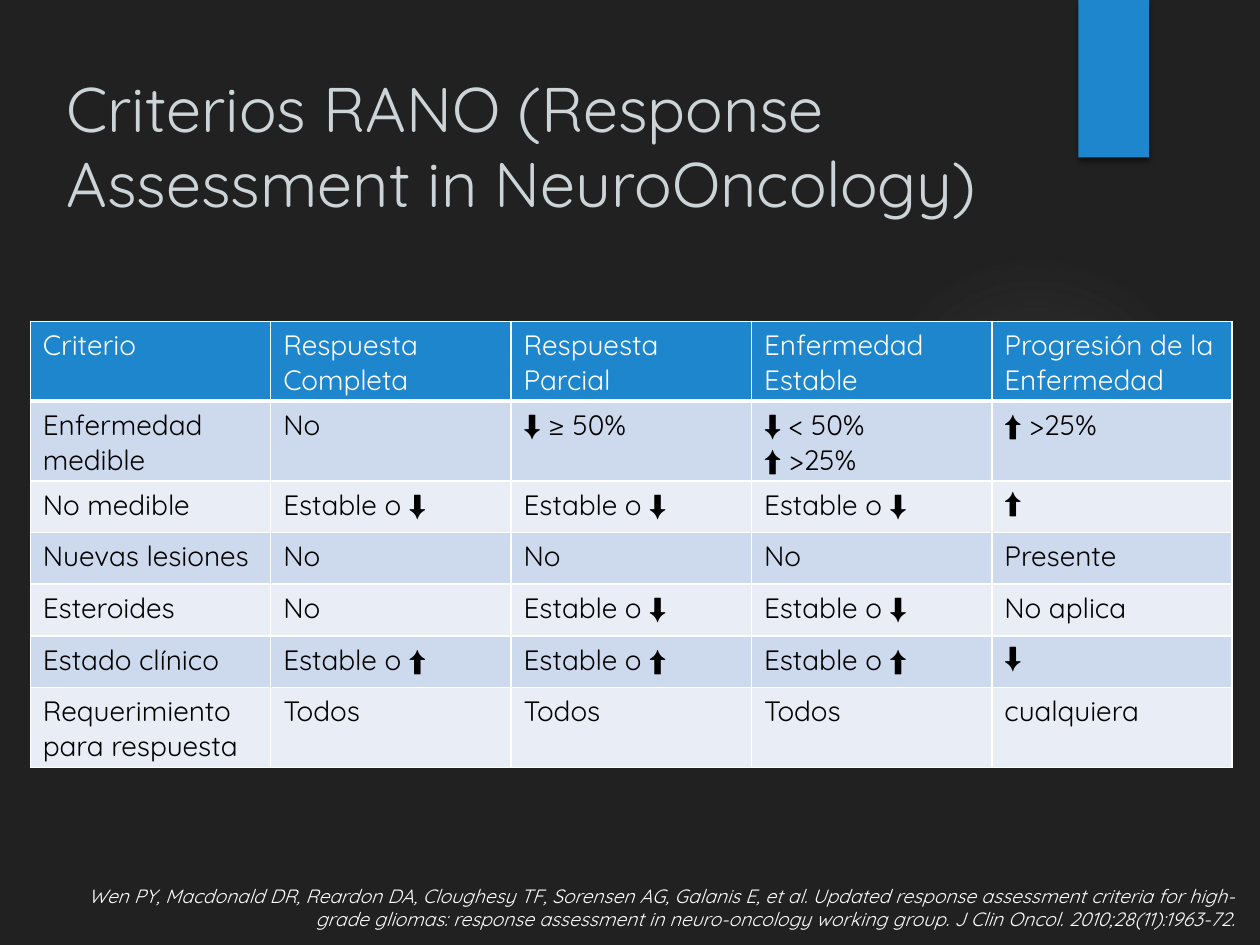
from lxml import etree
from pptx import Presentation
from pptx.dml.color import RGBColor
from pptx.enum import shapes, text
from pptx.oxml import ns
from pptx.util import Inches, Pt

BACKGROUND = RGBColor(0x21, 0x21, 0x21)
BLUE = RGBColor(0x1D, 0x86, 0xCD)
TITLE_GREY = RGBColor(0xCD, 0xD4, 0xD7)
WHITE = RGBColor(0xFF, 0xFF, 0xFF)
BLACK = RGBColor(0, 0, 0)
BANDS = [RGBColor(0xCD, 0xD9, 0xED), RGBColor(0xE8, 0xED, 0xF6)]
GLOW = RGBColor(0xA6, 0xA6, 0xA6)
BODY_FONT, ARROW_FONT = "Quicksand", "Arial"

# Content: a line break in a cell starts a new paragraph
TITLE = "Criterios RANO (Response Assessment in NeuroOncology)"
DOWN, UP = "Estable o ⬇", "Estable o ⬆"
CRITERIA = [
    ["Criterio", "Respuesta Completa", "Respuesta Parcial", "Enfermedad Estable",
     "Progresión de la Enfermedad"],
    ["Enfermedad medible", "No", "⬇ ≥ 50%", "⬇ < 50%\n⬆ >25%", "⬆ >25%"],
    ["No medible", DOWN, DOWN, DOWN, "⬆"],
    ["Nuevas lesiones", "No", "No", "No", "Presente"],
    ["Esteroides", "No", DOWN, DOWN, "No aplica"],
    ["Estado clínico", UP, UP, UP, "⬇"],
    ["Requerimiento para respuesta", "Todos", "Todos", "Todos", "cualquiera"],
]
REFERENCE = (
    "Wen PY, Macdonald DR, Reardon DA, Cloughesy TF, Sorensen AG, Galanis E, et al. "
    "Updated response assessment criteria for high-grade gliomas: response assessment in "
    "neuro-oncology working group. J Clin Oncol. 2010;28(11):1963-72."
)


def add_xml(parent, xml):
    """Append a DrawingML fragment and return it."""
    element = etree.fromstring(xml.replace(">", f' xmlns:a="{ns.nsuri("a")}">', 1))
    parent.append(element)
    return element


def add_decoration(slide, preset, *box):
    shape = slide.shapes.add_shape(preset, *map(Inches, box))
    shape.shadow.inherit = False
    shape.line.fill.background()
    return shape


def set_font(paragraph, size, color):
    paragraph.font.size = Pt(size)
    paragraph.font.color.rgb = color


def add_text(slide, words, box, size, color):
    frame = slide.shapes.add_textbox(*map(Inches, box)).text_frame
    frame.word_wrap = True
    paragraph = frame.paragraphs[0]
    paragraph.text = words
    set_font(paragraph, size, color)
    paragraph.font.name = BODY_FONT
    return paragraph


def split_arrows(line):
    """Split a line into (words, font) runs, arrows taking a following space."""
    for arrow in "⬇⬆":
        if arrow in line:
            before, after = line.split(arrow)
            gap = " " if after.startswith(" ") else ""
            runs = [(before, BODY_FONT), (arrow + gap, ARROW_FONT), (after.lstrip(), BODY_FONT)]
            return [run for run in runs if run[0]]
    return [(line, BODY_FONT)]


def set_borders(cell, bottom):
    properties = cell._tc.get_or_add_tcPr()
    for position, (side, width) in enumerate(
            [("lnL", 1), ("lnR", 1), ("lnT", 1), ("lnB", bottom)]):
        border = add_xml(properties, f'<a:{side} w="{Pt(width)}"><a:solidFill>'
                         f'<a:srgbClr val="{WHITE}"/></a:solidFill></a:{side}>')
        properties.insert(position, border)


def fill_cell(cell, words, fill, color, bottom):
    cell.fill.solid()
    cell.fill.fore_color.rgb = fill
    set_borders(cell, bottom)
    for index, line in enumerate(words.split("\n")):
        frame = cell.text_frame
        paragraph = frame.add_paragraph() if index else frame.paragraphs[0]
        set_font(paragraph, 16, color)
        for part, font in split_arrows(line):
            run = paragraph.add_run()
            run.text = part
            run.font.name = font


def main():
    deck = Presentation()
    deck.slide_width, deck.slide_height = Inches(10), Inches(7.5)
    slide = deck.slides.add_slide(deck.slide_layouts[6])
    slide.background.fill.solid()
    slide.background.fill.fore_color.rgb = BACKGROUND

    # Soft glow behind the table
    glow = add_decoration(slide, shapes.MSO_SHAPE.OVAL, 7.06, 1.83, 2.31, 3.08)
    glow.fill.background()
    properties = glow._element.spPr
    stops = "".join(
        f'<a:gs pos="{position * 1000}"><a:srgbClr val="{GLOW}">'
        f'<a:alpha val="{alpha * 1000}"/></a:srgbClr></a:gs>'
        for position, alpha in [(0, 7), (36, 6), (69, 0), (100, 0)])
    gradient = add_xml(
        properties, f'<a:gradFill><a:gsLst>{stops}</a:gsLst><a:path path="circle">'
        '<a:fillToRect l="50000" t="50000" r="50000" b="50000"/></a:path></a:gradFill>')
    properties.replace(properties.find(ns.qn("a:noFill")), gradient)

    # Blue tab with its shadow
    tab = add_decoration(slide, shapes.MSO_SHAPE.RECTANGLE, 8.56, 0, 0.56, 1.25)
    tab.fill.solid()
    tab.fill.fore_color.rgb = BLUE
    add_xml(tab._element.spPr.find(ns.qn("a:effectLst")),
            f'<a:outerShdw blurRad="{Pt(3)}" dist="{Pt(2)}" dir="5400000" rotWithShape="0">'
            f'<a:srgbClr val="{BLACK}"><a:alpha val="45000"/></a:srgbClr></a:outerShdw>')

    # Title
    add_text(slide, TITLE, (0.43, 0.5, 7.81, 1.53), 36, TITLE_GREY)

    # Criteria table
    rows, columns = len(CRITERIA), len(CRITERIA[0])
    table = slide.shapes.add_table(rows, columns, Inches(0.24), Inches(2.55),
                                   Inches(9.54), Inches(0.41 * rows)).table
    for r, row in enumerate(CRITERIA):
        fill, color, bottom = (BANDS[(r - 1) % 2], BLACK, 1) if r else (BLUE, WHITE, 3)
        for c, words in enumerate(row):
            fill_cell(table.cell(r, c), words, fill, color, bottom)

    # Reference
    reference = add_text(slide, REFERENCE, (0.19, 6.97, 9.72, 0.47), 11, WHITE)
    reference.alignment = text.PP_ALIGN.RIGHT
    reference.font.italic = True

    deck.save("out.pptx")


if __name__ == "__main__":
    main()
